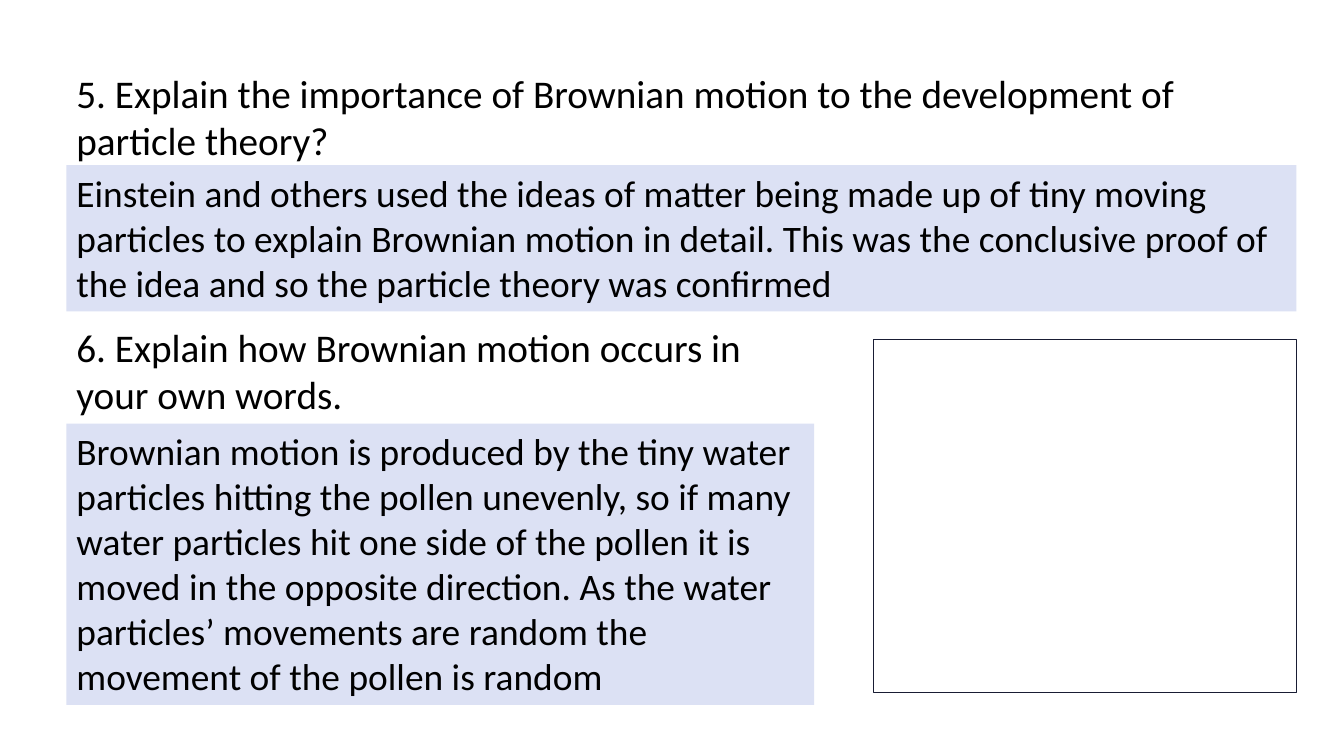
from dataclasses import dataclass

import pptx
import pptx.dml.color
import pptx.enum.shapes
import pptx.enum.text
import pptx.util

Pt = pptx.util.Pt
RGB = pptx.dml.color.RGBColor.from_string
RECTANGLE = pptx.enum.shapes.MSO_SHAPE.RECTANGLE


@dataclass(frozen=True)
class Theme:
    font: str = "Calibri"
    text: str = "000000"
    answer_fill: str = "DCE1F4"
    frame_fill: str = "FFFFFF"
    frame_line: str = "191D34"
    question_size: float = 28
    answer_size: float = 26.7


THEME = Theme()


@dataclass(frozen=True)
class Box:
    left: float
    top: float
    width: float
    height: float

    def lengths(self):
        return [Pt(v) for v in (self.left, self.top, self.width, self.height)]


def write(frame, wording, size):
    frame.word_wrap = True
    frame.auto_size = pptx.enum.text.MSO_AUTO_SIZE.SHAPE_TO_FIT_TEXT
    frame.vertical_anchor = pptx.enum.text.MSO_ANCHOR.TOP
    frame.text = wording
    paragraph = frame.paragraphs[0]
    paragraph.alignment = pptx.enum.text.PP_ALIGN.LEFT
    font = paragraph.runs[0].font
    font.name = THEME.font
    font.size = Pt(size)
    font.color.rgb = RGB(THEME.text)


def add_panel(slide, box, fill):
    panel = slide.shapes.add_shape(RECTANGLE, *box.lengths())
    panel.shadow.inherit = False
    panel.fill.solid()
    panel.fill.fore_color.rgb = RGB(fill)
    panel.line.fill.background()
    return panel


def add_question_and_answer(slide, box, answer_offset, question, answer):
    answer_box = Box(box.left, box.top + answer_offset,
                     box.width, box.height - answer_offset)
    answer_panel = add_panel(slide, answer_box, THEME.answer_fill)
    write(answer_panel.text_frame, answer, THEME.answer_size)

    question_box = Box(box.left, box.top, box.width, 75)
    question_text = slide.shapes.add_textbox(*question_box.lengths())
    write(question_text.text_frame, question, THEME.question_size)


def add_drawing_frame(slide, box):
    drawing_frame = add_panel(slide, box, THEME.frame_fill)
    drawing_frame.line.color.rgb = RGB(THEME.frame_line)
    drawing_frame.line.width = Pt(1)


def main():
    deck = pptx.Presentation()
    deck.slide_width, deck.slide_height = Pt(960), Pt(540)
    slide = deck.slides.add_slide(deck.slide_layouts[6])

    add_question_and_answer(
        slide, Box(47.5, 46, 878.5, 176.5), 72,
        "5. Explain the importance of Brownian motion to the development of "
        "particle theory?",
        "Einstein and others used the ideas of matter being made up of tiny "
        "moving particles to explain Brownian motion in detail. This was the "
        "conclusive proof of the idea and so the particle theory was confirmed",
    )
    add_question_and_answer(
        slide, Box(47.5, 227.5, 534, 276), 75,
        "6. Explain how Brownian motion occurs in your own words.",
        "Brownian motion is produced by the tiny water particles hitting the "
        "pollen unevenly, so if many water particles hit one side of the "
        "pollen it is moved in the opposite direction. As the water "
        "particles’ movements are random the movement of the pollen is random",
    )
    add_drawing_frame(slide, Box(624, 242.5, 302, 252))

    deck.save("out.pptx")


if __name__ == "__main__":
    main()
